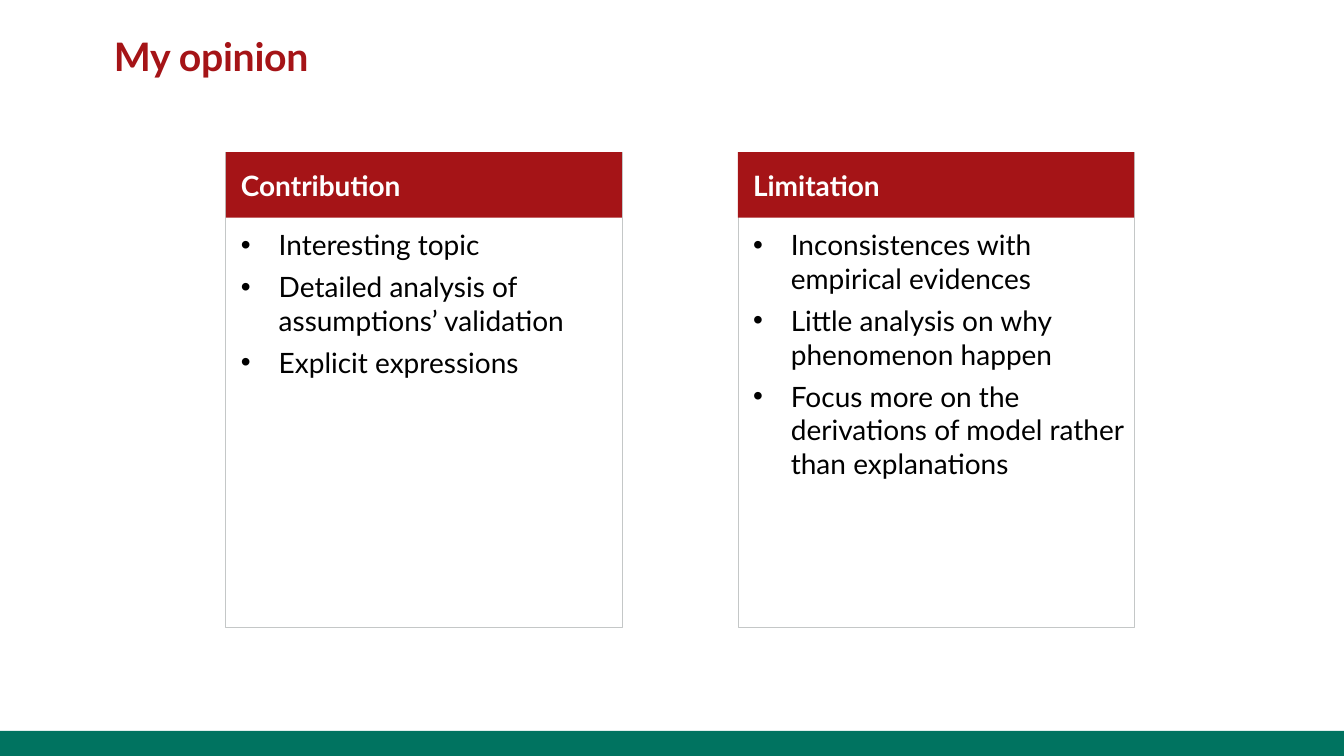
from dataclasses import dataclass

from lxml import etree
from pptx import Presentation
from pptx.dml.color import RGBColor
from pptx.enum.shapes import MSO_SHAPE
from pptx.enum.text import MSO_ANCHOR, PP_ALIGN
from pptx.oxml.ns import qn
from pptx.shapes.autoshape import Shape
from pptx.slide import Slide
from pptx.text.text import TextFrame, _Paragraph
from pptx.util import Pt

RECT = MSO_SHAPE.RECTANGLE
TOP, MIDDLE, BOTTOM = MSO_ANCHOR.TOP, MSO_ANCHOR.MIDDLE, MSO_ANCHOR.BOTTOM
LEFT = PP_ALIGN.LEFT

FONT = "Lato"
COLORS = {
    "red": "A51417",
    "green": "007360",
    "grey": "C4C7C7",
    "white": "FFFFFF",
    "black": "000000",
}
WIDE, HIGH = 960, 540
BAR = 18
CARD_TOP, CARD_WIDE, CARD_HIGH = 108.7, 283, 339.1
HEAD_HIGH = 46.8
CARD_LEFT, CARD_STEP = 161.3, 365.8
INDENT = 27


@dataclass(frozen=True)
class Box:
    left: float
    top: float
    width: float
    height: float


@dataclass(frozen=True)
class Card:
    head: str
    points: tuple[str, ...]


CARDS = (
    Card("Contribution", (
        "Interesting topic",
        "Detailed analysis of assumptions’ validation",
        "Explicit expressions",
    )),
    Card("Limitation", (
        "Inconsistences with empirical evidences",
        "Little analysis on why phenomenon happen",
        "Focus more on the derivations of model rather than explanations",
    )),
)


def color(name: str) -> RGBColor:
    return RGBColor.from_string(COLORS[name])


def place(box: Box) -> tuple[Pt, Pt, Pt, Pt]:
    return Pt(box.left), Pt(box.top), Pt(box.width), Pt(box.height)


def add_rect(slide: Slide, box: Box, fill: str, line: str = "") -> Shape:
    shape = slide.shapes.add_shape(RECT, *place(box))
    shape.shadow.inherit = False
    shape.fill.solid()
    shape.fill.fore_color.rgb = color(fill)
    if line:
        shape.line.color.rgb = color(line)
        shape.line.width = Pt(0.5)
    else:
        shape.line.fill.background()
    return shape


def set_frame(frame: TextFrame, anchor: MSO_ANCHOR, left: float, top: float,
              right: float, bottom: float) -> None:
    frame.word_wrap = True
    frame.vertical_anchor = anchor
    frame.margin_left, frame.margin_top = Pt(left), Pt(top)
    frame.margin_right, frame.margin_bottom = Pt(right), Pt(bottom)


def set_text(para: _Paragraph, text: str, size: float, ink: str,
             bold: bool = False) -> None:
    para.text = text
    para.alignment = LEFT
    para.font.name = FONT
    para.font.size = Pt(size)
    para.font.bold = bold
    para.font.color.rgb = color(ink)


def add_bullet(para: _Paragraph) -> None:
    props = para._p.get_or_add_pPr()
    props.set("marL", str(Pt(INDENT)))
    props.set("indent", str(Pt(-INDENT)))
    font = etree.Element(qn("a:buFont"), typeface="Arial")
    mark = etree.Element(qn("a:buChar"), char="•")
    rest = props.find(qn("a:defRPr"))
    rest.addprevious(font)
    rest.addprevious(mark)


def add_title(slide: Slide, text: str) -> None:
    frame = slide.shapes.add_textbox(*place(Box(81.4, 0, 816, 57))).text_frame
    set_frame(frame, BOTTOM, 0, 0, 0, 0)
    para = frame.paragraphs[0]
    set_text(para, text, 28, "red", True)
    para.runs[0]._r.get_or_add_rPr().set("spc", "-20")


def add_card(slide: Slide, card: Card, left: float) -> None:
    body = add_rect(slide, Box(left, CARD_TOP, CARD_WIDE, CARD_HIGH),
                    "white", "grey")
    frame = body.text_frame
    set_frame(frame, TOP, 10.8, 54, 7.2, 7.2)
    for index, point in enumerate(card.points):
        para = frame.add_paragraph() if index else frame.paragraphs[0]
        set_text(para, point, 20, "black")
        para.space_after = Pt(6)
        add_bullet(para)

    head = add_rect(slide, Box(left, CARD_TOP, CARD_WIDE, HEAD_HIGH), "red")
    set_frame(head.text_frame, MIDDLE, 10.8, 0, 7.2, 0)
    set_text(head.text_frame.paragraphs[0], card.head, 20, "white", True)


def main() -> None:
    deck = Presentation()
    deck.slide_width, deck.slide_height = Pt(WIDE), Pt(HIGH)
    slide = deck.slides.add_slide(deck.slide_layouts[6])
    add_rect(slide, Box(0, HIGH - BAR, WIDE, BAR), "green")
    add_title(slide, "My opinion")
    for index, card in enumerate(CARDS):
        add_card(slide, card, CARD_LEFT + index * CARD_STEP)
    deck.save("out.pptx")


if __name__ == "__main__":
    main()
